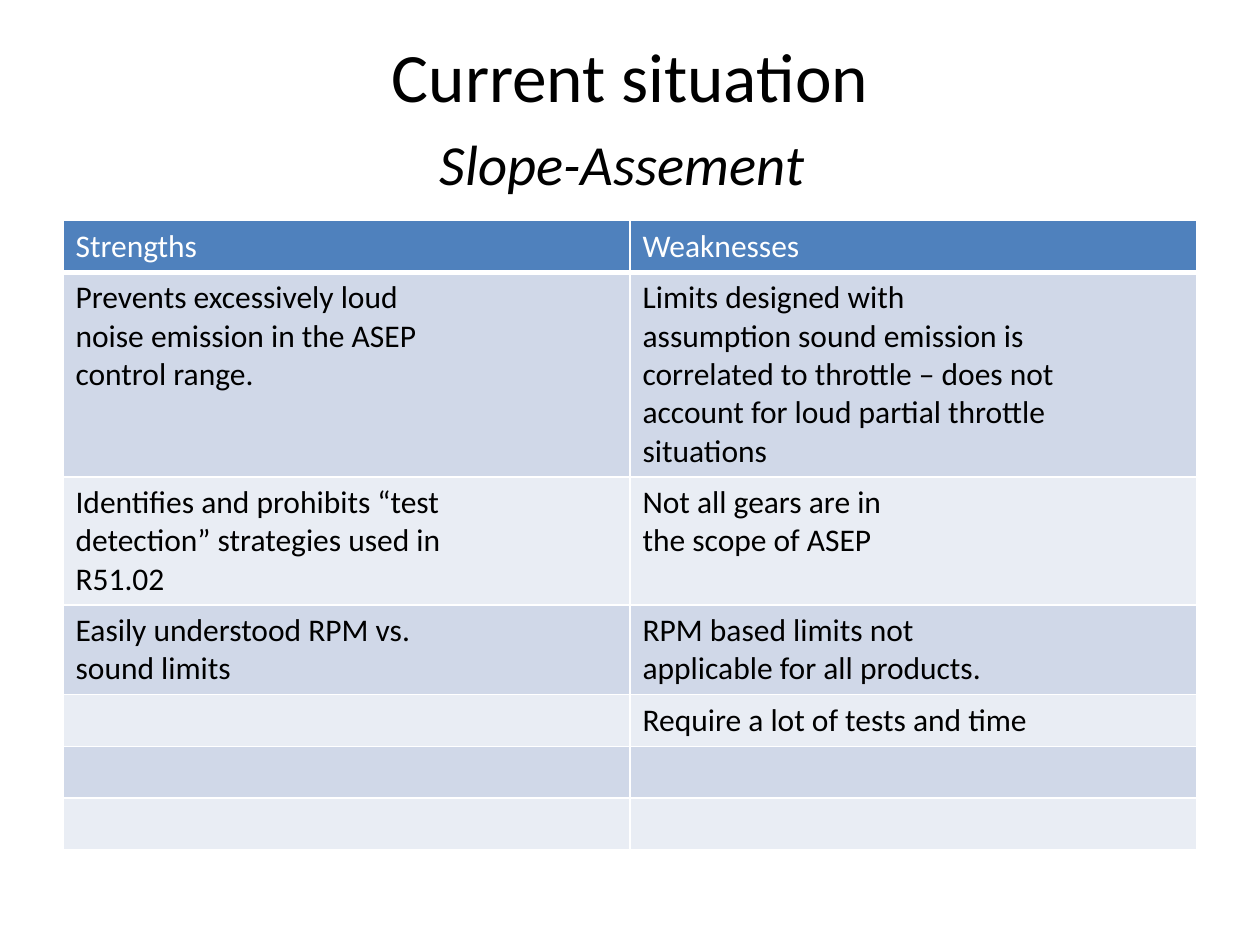
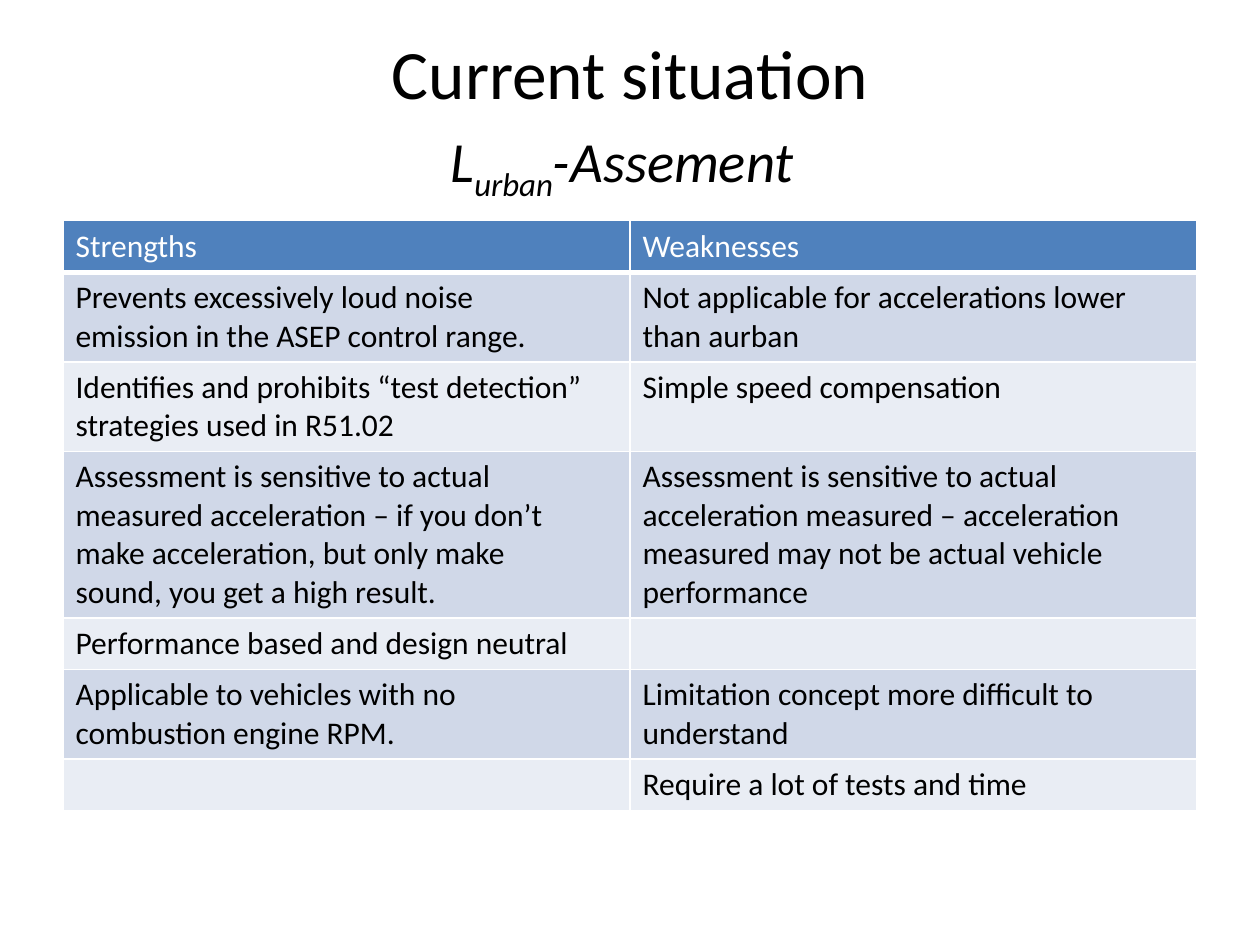
from copy import deepcopy

from lxml import etree
from pptx import Presentation
from pptx.dml.color import RGBColor
from pptx.enum.text import MSO_ANCHOR, MSO_AUTO_SIZE, PP_ALIGN
from pptx.oxml.ns import qn
from pptx.util import Cm, Pt

MIDDLE = MSO_ANCHOR.MIDDLE
NO_AUTOFIT = MSO_AUTO_SIZE.NONE
CENTER = PP_ALIGN.CENTER

HEADING = "Current situation"
COLUMNS = ("Strengths", "Weaknesses")
SLIDES = [
    {
        "subtitle": [("Slope-Assement", 0)],
        "rows": [
            ("Prevents excessively loud\nnoise emission in the ASEP\ncontrol range.",
             "Limits designed with\nassumption sound emission is\n"
             "correlated to throttle – does not\n"
             "account for loud partial throttle\nsituations"),
            ("Identifies and prohibits “test\ndetection” strategies used in\nR51.02",
             "Not all gears are in\nthe scope of ASEP"),
            ("Easily understood RPM vs.\nsound limits",
             "RPM based limits not\napplicable for all products."),
            ("", "Require a lot of tests and time"),
            ("", ""),
            ("", ""),
        ],
    },
    {
        "subtitle": [("L", 0), ("urban", -25), ("-Assement", 0)],
        "rows": [
            ("Prevents excessively loud noise\nemission in the ASEP control range.",
             "Not applicable for accelerations lower\nthan aurban"),
            ("Identifies and prohibits “test detection”\nstrategies used in R51.02",
             "Simple speed compensation"),
            ("Assessment is sensitive to actual\nmeasured acceleration – if you don’t\n"
             "make acceleration, but only make\nsound, you get a high result.",
             "Assessment is sensitive to actual\nacceleration measured – acceleration\n"
             "measured may not be actual vehicle\nperformance"),
            ("Performance based and design neutral", ""),
            ("Applicable to vehicles with no\ncombustion engine RPM.",
             "Limitation concept more difficult to\nunderstand"),
            ("", "Require a lot of tests and time"),
        ],
    },
]

FONT = "Calibri"
BLACK, WHITE = "000000", "FFFFFF"
HEADER_FILL = "4F81BD"
BAND_FILLS = ("D0D8E8", "E9EDF4")
HEADING_SIZE, SUBTITLE_SIZE, TABLE_SIZE = 39.6, 32.4, 18
THIN, THICK = 1, 3

LEFT, WIDTH = Cm(1.27), Cm(22.86)
TITLE_TOP, TITLE_HEIGHT = Cm(0.76), Cm(3.18)
TABLE_TOP, ROW_HEIGHT = Cm(4.45), Cm(1.04)


def rgb(color):
    return RGBColor.from_string(color)


def add_run(paragraph, text, size, color, italic=False, baseline=0):
    run = paragraph.add_run()
    run.text = text
    run.font.name = FONT
    run.font.size = Pt(size)
    run.font.italic = italic
    run.font.color.rgb = rgb(color)
    if baseline:
        run.font._element.set("baseline", str(baseline * 1000))
    return run


def add_title(slide, subtitle):
    title = slide.shapes.title
    title.left, title.top, title.width, title.height = LEFT, TITLE_TOP, WIDTH, TITLE_HEIGHT
    frame = title.text_frame
    frame.word_wrap = True
    frame.auto_size = NO_AUTOFIT
    frame.vertical_anchor = MIDDLE
    paragraph = frame.paragraphs[0]
    paragraph.alignment = CENTER
    heading = add_run(paragraph, HEADING, HEADING_SIZE, BLACK)
    paragraph.add_line_break()
    paragraph._p[-1].append(deepcopy(heading.font._element))
    for text, baseline in subtitle:
        add_run(paragraph, text, SUBTITLE_SIZE, BLACK, True, baseline)
    add_run(paragraph, " ", HEADING_SIZE, BLACK)


def set_borders(cell, widths):
    properties = cell._tc.get_or_add_tcPr()
    for position, (side, width) in enumerate(widths.items()):
        line = etree.Element(qn(f"a:{side}"), w=str(Pt(width)))
        fill = etree.SubElement(line, qn("a:solidFill"))
        etree.SubElement(fill, qn("a:srgbClr"), val=WHITE)
        properties.insert(position, line)


def fill_cell(cell, text, row_index):
    is_header = row_index == 0
    cell.fill.solid()
    cell.fill.fore_color.rgb = rgb(HEADER_FILL if is_header else BAND_FILLS[(row_index - 1) % 2])
    set_borders(cell, {
        "lnL": THIN,
        "lnR": THIN,
        "lnT": THICK if row_index == 1 else THIN,
        "lnB": THICK if is_header else THIN,
    })
    frame = cell.text_frame
    for index, line in enumerate(text.split("\n")):
        paragraph = frame.add_paragraph() if index else frame.paragraphs[0]
        if line:
            add_run(paragraph, line, TABLE_SIZE, WHITE if is_header else BLACK)


def add_comparison(slide, rows):
    table_rows = [COLUMNS, *rows]
    frame = slide.shapes.add_table(len(table_rows), len(COLUMNS), LEFT, TABLE_TOP,
                                   WIDTH, ROW_HEIGHT * len(table_rows))
    table = frame.table
    table.first_row = table.horz_banding = False
    for row_index, texts in enumerate(table_rows):
        for column_index, text in enumerate(texts):
            fill_cell(table.cell(row_index, column_index), text, row_index)


def main():
    presentation = Presentation()
    presentation.slide_width, presentation.slide_height = Cm(25.4), Cm(19.05)
    title_only = presentation.slide_layouts[5]
    for content in SLIDES:
        slide = presentation.slides.add_slide(title_only)
        add_title(slide, content["subtitle"])
        add_comparison(slide, content["rows"])
    presentation.save("out.pptx")


if __name__ == "__main__":
    main()
